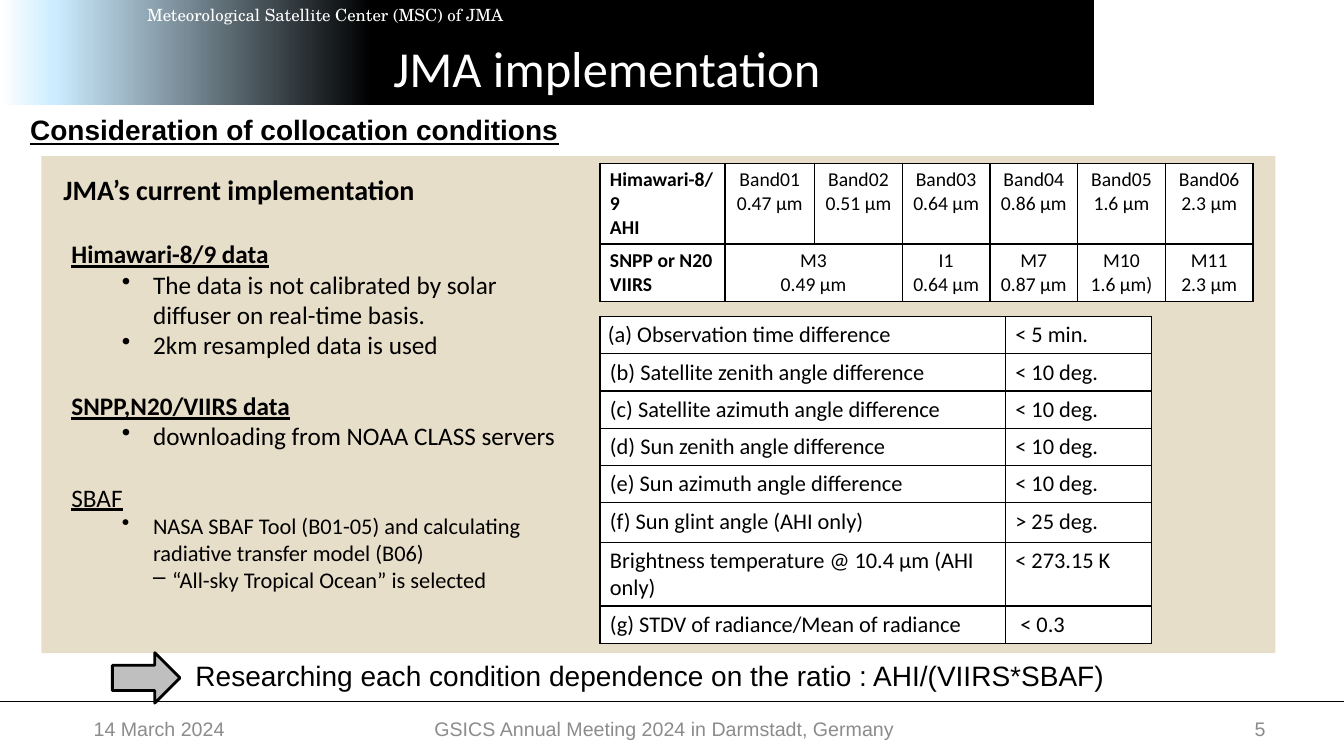
from lxml.etree import SubElement
from pptx import Presentation
from pptx.dml.color import RGBColor
from pptx.enum.shapes import MSO_CONNECTOR, MSO_SHAPE
from pptx.enum.text import MSO_ANCHOR, PP_ALIGN
from pptx.oxml.ns import qn
from pptx.util import Inches, Pt

BLACK, WHITE, GREY, SAND = "000000", "FFFFFF", "8C8C8C", "E7DEC9"
BODY = {"name": "Calibri", "size": Pt(18)}
UNDERLINED = {**BODY, "underline": True}
HEADING = {**UNDERLINED, "bold": True}
SMALL = {**BODY, "size": Pt(16)}
BAND = {**BODY, "size": Pt(14)}
FOOTER = {"name": "Arial", "size": Pt(14)}
STATEMENT = {"name": "Arial", "size": Pt(20)}

BANDS = [
    ["Himawari-8/9\nAHI", "Band01\n0.47 μm", "Band02\n0.51 μm", "Band03\n0.64 μm",
     "Band04\n0.86 μm", "Band05\n1.6 μm", "Band06\n2.3 μm"],
    ["SNPP or N20\nVIIRS", "M3\n0.49 μm", "", "I1\n0.64 μm",
     "M7\n0.87 μm", "M10\n1.6 μm)", "M11\n2.3 μm"],
]
CONDITIONS = [
    ["(a) Observation time difference", "< 5 min."],
    ["(b) Satellite zenith angle difference", "< 10 deg."],
    ["(c) Satellite azimuth angle difference", "< 10 deg."],
    ["(d) Sun zenith angle difference", "< 10 deg."],
    ["(e) Sun azimuth angle difference", "< 10 deg."],
    ["(f) Sun glint angle (AHI only)", "> 25 deg."],
    ["Brightness temperature @ 10.4 μm (AHI only)", "< 273.15 K"],
    ["(g) STDV of radiance/Mean of radiance", " < 0.3"],
]
# Text, font, bullet, left indent in inches, hanging indent in inches
IMPLEMENTATION = [
    ("Himawari-8/9 data", HEADING, None, 0, 0),
    ("The data is not calibrated by solar diffuser on real-time basis.", BODY, "•", 0.81, 0.31),
    ("2km resampled data is used", BODY, "•", 0.81, 0.31),
    ("SNPP,N20/VIIRS data", HEADING, None, 0, 0),
    ("downloading from NOAA CLASS servers", BODY, "•", 0.81, 0.31),
    ("SBAF", UNDERLINED, None, 0, 0),
    ("NASA SBAF Tool (B01-05) and calculating radiative transfer model (B06)",
     SMALL, "•", 0.81, 0.31),
    ("“All-sky Tropical Ocean” is selected", SMALL, "–", 1, 0.19),
]


def rgb(value):
    return RGBColor.from_string(value)


def set_font(font, formats, color=BLACK):
    for name, value in formats.items():
        setattr(font, name, value)
    font.color.rgb = rgb(color)


def write(tf, text, formats, color=BLACK, align=PP_ALIGN.LEFT):
    tf.word_wrap = True
    for i, line in enumerate(text.split("\n")):
        p = tf.paragraphs[0] if i == 0 else tf.add_paragraph()
        r = p.add_run()
        r.text = line
        p.alignment = align
        set_font(r.font, formats, color)


def add_text(s, box, text, formats, color=BLACK, align=PP_ALIGN.LEFT, anchor=MSO_ANCHOR.TOP):
    sp = s.shapes.add_textbox(*map(Inches, box))
    sp.text_frame.vertical_anchor = anchor
    write(sp.text_frame, text, formats, color, align)
    return sp


def add_shape(s, kind, box, fill):
    sp = s.shapes.add_shape(kind, *map(Inches, box))
    sp.shadow.inherit = False
    sp.fill.solid()
    sp.fill.fore_color.rgb = rgb(fill)
    sp.line.fill.background()
    return sp


def add_banner(s, box):
    left, top, width, height = box
    sp = add_shape(s, MSO_SHAPE.RECTANGLE, box, BLACK)
    # Black fading to white at the left end
    sp.fill.gradient()
    sp.fill.gradient_angle = 180
    stops = sp._element.spPr.find(qn("a:gradFill")).find(qn("a:gsLst"))
    for stop in list(stops):
        stops.remove(stop)
    for pos, color in ((66, BLACK), (95, "CCECFF"), (100, WHITE)):
        stop = SubElement(stops, qn("a:gs"), pos=str(pos * 1000))
        SubElement(stop, qn("a:srgbClr"), val=color)
    add_text(s, (left + 1.36, top, 6.25, 0.3), "Meteorological Satellite Center (MSC) of JMA",
             {"name": "TeX Gyre Schola", "size": Pt(12)}, WHITE)
    # Title, brought in front of the banner
    title = s.shapes.title
    title.left, title.top, title.width, title.height = map(
        Inches, (left + 0.02, top + 0.27, 12, 0.8))
    title.text_frame.vertical_anchor = MSO_ANCHOR.MIDDLE
    write(title.text_frame, "JMA implementation", {"name": "Calibri", "size": Pt(36)},
          WHITE, PP_ALIGN.CENTER)
    s.shapes._spTree.append(title._element)


def add_implementation(s, box):
    left, top, width, height = box
    add_text(s, (left + 0.12, top, width, 0.44), "JMA’s current implementation",
             {"name": "Calibri", "size": Pt(20), "bold": True})
    sp = s.shapes.add_textbox(*map(Inches, (left + 0.2, top + 0.66, width, height - 0.66)))
    tf = sp.text_frame
    tf.word_wrap = True
    for i, (text, formats, bullet, indent, hang) in enumerate(IMPLEMENTATION):
        p = tf.paragraphs[0] if i == 0 else tf.add_paragraph()
        r = p.add_run()
        r.text = text
        set_font(r.font, formats)
        if bullet:
            p.level = 1
            pPr = p._p.get_or_add_pPr()
            pPr.set("marL", str(Inches(indent)))
            pPr.set("indent", str(-Inches(hang)))
            SubElement(pPr, qn("a:buChar"), char=bullet)
        elif i:
            p.space_before = Pt(22)


def add_borders(cell):
    tcPr = cell._tc.get_or_add_tcPr()
    for side in ("a:lnL", "a:lnR", "a:lnT", "a:lnB"):
        ln = SubElement(tcPr, qn(side), w=str(Pt(1)))
        fill = SubElement(ln, qn("a:solidFill"))
        SubElement(fill, qn("a:srgbClr"), val=BLACK)


def add_grid(s, left, top, rows, widths, heights):
    frame = s.shapes.add_table(len(rows), len(widths), Inches(left), Inches(top),
                               Inches(sum(widths)), Inches(sum(heights)))
    table = frame.table
    for column, width in zip(table.columns, widths):
        column.width = Inches(width)
    for row, height in zip(table.rows, heights):
        row.height = Inches(height)
    for cell in table.iter_cells():
        add_borders(cell)
        cell.fill.solid()
        cell.fill.fore_color.rgb = rgb(WHITE)
    return table


def add_bands(s, left, top):
    table = add_grid(s, left, top, BANDS, [1.24, 0.89] + [0.87] * 5, [0.8, 0.57])
    table.cell(1, 1).merge(table.cell(1, 2))
    for i, row in enumerate(BANDS):
        for j, text in enumerate(row):
            if text:
                write(table.cell(i, j).text_frame, text, {**BAND, "bold": j == 0},
                      align=PP_ALIGN.CENTER if j else PP_ALIGN.LEFT)


def add_conditions(s, left, top):
    table = add_grid(s, left, top, CONDITIONS, [4.02, 1.45], [0.37] * 5 + [0.39, 0.63, 0.37])
    for i, row in enumerate(CONDITIONS):
        for j, text in enumerate(row):
            write(table.cell(i, j).text_frame, text, SMALL)
    first = table.cell(0, 0)
    first.vertical_anchor = MSO_ANCHOR.MIDDLE
    first.margin_left = first.margin_right = Inches(0.08)
    first.margin_top = first.margin_bottom = 0


def add_conclusion(s, left, top):
    arrow = add_shape(s, MSO_SHAPE.DOWN_ARROW, (left, top, 0.5, 0.67), "BFBFBF")
    arrow.rotation = 270
    arrow.line.color.rgb = rgb(BLACK)
    arrow.line.width = Pt(2)
    add_text(s, (left + 0.64, top + 0.09, 10.01, 0.44),
             "Researching each condition dependence on the ratio : AHI/(VIIRS*SBAF)", STATEMENT)


def add_footer(s, top, width):
    rule = s.shapes.add_connector(MSO_CONNECTOR.STRAIGHT, 0, Inches(top), Inches(width), Inches(top))
    rule.line.color.rgb = rgb(BLACK)
    rule.line.width = Pt(1)
    SubElement(rule._element.spPr, qn("a:effectLst"))
    for left, w, text, align in (
            (0.83, 3.11, "14 March 2024", PP_ALIGN.LEFT),
            (4.02, 5.14, "GSICS Annual Meeting 2024 in Darmstadt, Germany", PP_ALIGN.CENTER),
            (9.54, 3.11, "5", PP_ALIGN.RIGHT)):
        add_text(s, (left, top + 0.07, w, 0.4), text, FOOTER, GREY, align, MSO_ANCHOR.MIDDLE)


def main():
    prs = Presentation()
    prs.slide_width, prs.slide_height = Inches(13.33), Inches(7.5)
    s = prs.slides.add_slide(prs.slide_layouts[5])
    add_banner(s, (0, 0, 10.85, 1.04))
    add_footer(s, 6.96, 13.33)
    add_text(s, (0.2, 1.07, 6.05, 0.44), "Consideration of collocation conditions",
             {**STATEMENT, "bold": True, "underline": True})
    # Sand panel with the implementation notes and both tables
    add_shape(s, MSO_SHAPE.RECTANGLE, (0.41, 1.55, 12.24, 4.93), SAND)
    add_implementation(s, (0.41, 1.66, 5.22, 4.7))
    add_conditions(s, 5.95, 3.14)
    add_bands(s, 5.95, 1.62)
    add_conclusion(s, 1.2, 6.39)
    prs.save("out.pptx")


if __name__ == "__main__":
    main()
